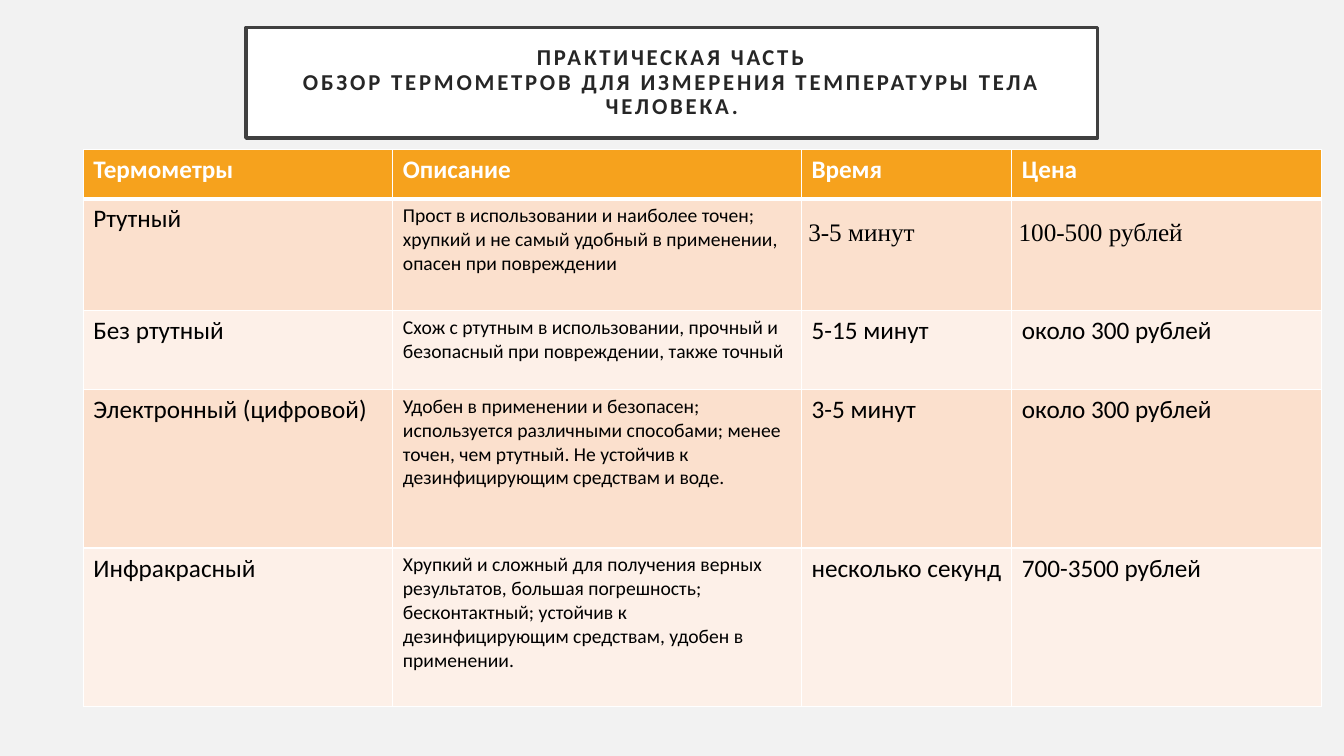
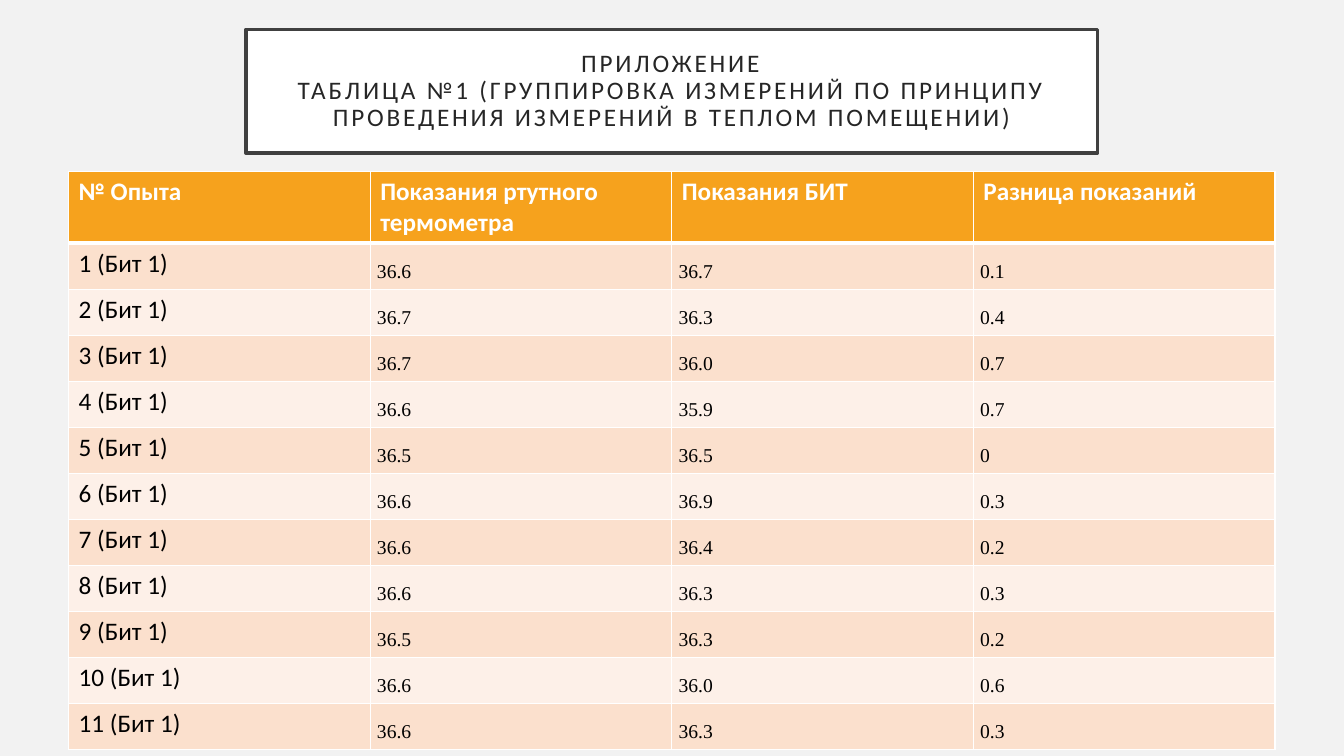
from lxml import etree
from pptx import Presentation
from pptx import util as u
from pptx.dml.color import RGBColor
from pptx.enum import text
from pptx.oxml.ns import qn

COLORS = {
    "page": "F2F2F2", "white": "FFFFFF", "frame": "404040", "title": "262626",
    "header": "F6A21D", "odd": "FBE0CD", "even": "FDF0E8", "body": "000000",
}
SANS, SERIF = "Calibri", "Times New Roman"
TITLE_ONLY = 5

THERMOMETERS = [
    ["Термометры", "Описание", "Время", "Цена"],
    ["Ртутный",
     "Прост в использовании и наиболее точен; хрупкий и не самый удобный "
     "в применении, опасен при повреждении",
     "3-5 минут", "100-500 рублей"],
    ["Без ртутный",
     "Схож с ртутным в использовании, прочный и безопасный при повреждении, "
     "также точный",
     "5-15 минут", "около 300 рублей"],
    ["Электронный (цифровой)",
     "Удобен в применении и безопасен; используется различными способами; "
     "менее точен, чем ртутный. Не устойчив к дезинфицирующим средствам и воде.",
     "3-5 минут", "около 300 рублей"],
    ["Инфракрасный",
     "Хрупкий и сложный для получения верных результатов, большая погрешность; "
     "бесконтактный; устойчив к дезинфицирующим средствам, удобен в применении.",
     "несколько секунд", "700-3500 рублей"],
]
READINGS_HEADER = ["№ Опыта", "Показания ртутного термометра",
                   "Показания БИТ", "Разница показаний"]
READINGS = [
    ("36.6", "36.7", "0.1"), ("36.7", "36.3", "0.4"), ("36.7", "36.0", "0.7"),
    ("36.6", "35.9", "0.7"), ("36.5", "36.5", "0"), ("36.6", "36.9", "0.3"),
    ("36.6", "36.4", "0.2"), ("36.6", "36.3", "0.3"), ("36.5", "36.3", "0.2"),
    ("36.6", "36.0", "0.6"), ("36.6", "36.3", "0.3"),
]


def rgb(name):
    return RGBColor.from_string(COLORS[name])


class Report:
    """Holds the deck, its style and the slide being filled."""

    def __init__(self):
        self.deck = Presentation()
        self.deck.slide_width, self.deck.slide_height = u.Cm(33.87), u.Cm(19.05)
        self.paint(self.deck.slide_master.background, "page")
        self.page = None

    @staticmethod
    def paint(item, color):
        item.fill.solid()
        item.fill.fore_color.rgb = rgb(color)

    @staticmethod
    def style(para, size, color, name=SANS, bold=False):
        para.font.size, para.font.name, para.font.bold = u.Pt(size), name, bold
        para.font.color.rgb = rgb(color)

    def add_page(self, title, top, height, size, bold=False):
        self.page = self.deck.slides.add_slide(
            self.deck.slide_layouts[TITLE_ONLY])
        box = self.page.shapes.title
        box.left, box.top = u.Cm(6.2), u.Cm(top)
        box.width, box.height = u.Cm(21.46), u.Cm(height)
        self.paint(box, "white")
        box.line.color.rgb, box.line.width = rgb("frame"), u.Pt(2.5)
        frame = box.text_frame
        frame.text = title
        frame.word_wrap = True
        frame.auto_size = text.MSO_AUTO_SIZE.NONE
        frame.vertical_anchor = text.MSO_ANCHOR.MIDDLE
        frame.margin_left = frame.margin_right = u.Cm(0.5)
        frame.margin_top = frame.margin_bottom = u.Cm(0.5)
        para = frame.paragraphs[0]
        para.alignment, para.line_spacing = text.PP_ALIGN.CENTER, 0.9
        self.style(para, size, "title", bold=bold)
        for span in para.runs:
            span._r.get_or_add_rPr().set("spc", "200")

    def borders(self, cell, top, bottom):
        """Draw white cell borders; top and bottom are widths in points."""
        props = cell._tc.get_or_add_tcPr()
        widths = {"lnL": 1, "lnR": 1, "lnT": top, "lnB": bottom}
        for index, (tag, width) in enumerate(widths.items()):
            line = etree.Element(qn(f"a:{tag}"), w=str(u.Pt(width)))
            fill = etree.SubElement(line, qn("a:solidFill"))
            etree.SubElement(fill, qn("a:srgbClr"), val=COLORS["white"])
            props.insert(index, line)

    def add_table(self, left, top, widths, heights, rows, look):
        """look(row, column) gives the size, font and alignment of a body cell."""
        table = self.page.shapes.add_table(
            len(rows), len(widths), u.Cm(left), u.Cm(top),
            u.Cm(sum(widths)), u.Cm(sum(heights))).table
        for column, width in zip(table.columns, widths):
            column.width = u.Cm(width)
        for r, (row, height) in enumerate(zip(rows, heights)):
            table.rows[r].height = u.Cm(height)
            for c, words in enumerate(row):
                cell = table.cell(r, c)
                cell.text = words
                para = cell.text_frame.paragraphs[0]
                if r == 0:
                    self.paint(cell, "header")
                    self.style(para, 18, "white", bold=True)
                else:
                    self.paint(cell, "odd" if r % 2 else "even")
                    size, name, align = look(r, c)
                    para.alignment = align
                    if name == SERIF:
                        para.line_spacing = 1.5
                        cell.margin_left = cell.margin_right = u.Cm(0.17)
                        cell.margin_top = cell.margin_bottom = u.Cm(0.17)
                    self.style(para, size, "body", name)
                self.borders(cell, 3 if r == 1 else 1, 3 if r == 0 else 1)


def thermometer_look(row, column):
    serif = row == 1 and column > 1
    return 14 if column == 1 else 18, SERIF if serif else SANS, None


def reading_look(row, column):
    if column == 0:
        return 18, SANS, None
    return 14, SERIF, text.PP_ALIGN.JUSTIFY


def main():
    report = Report()
    report.add_page("ПРАКТИЧЕСКАЯ ЧАСТЬ\vОБЗОР ТЕРМОМЕТРОВ ДЛЯ ИЗМЕРЕНИЯ "
                    "ТЕМПЕРАТУРЫ ТЕЛА ЧЕЛОВЕКА.", 0.69, 2.79, 16.2, bold=True)
    report.add_table(2.1, 3.77, [7.8, 10.3, 5.3, 7.8],
                     [1.24, 2.82, 1.99, 3.99, 3.99],
                     THERMOMETERS, thermometer_look)

    report.add_page("ПРИЛОЖЕНИЕ\vТАБЛИЦА №1 (ГРУППИРОВКА ИЗМЕРЕНИЙ ПО ПРИНЦИПУ "
                    "ПРОВЕДЕНИЯ ИЗМЕРЕНИЙ В ТЕПЛОМ ПОМЕЩЕНИИ)", 0.74, 3.12, 18)
    rows = [READINGS_HEADER] + [
        [f"{number} (Бит 1)", *values]
        for number, values in enumerate(READINGS, 1)]
    report.add_table(1.73, 4.32, [7.6] * 4, [1.04] * len(rows),
                     rows, reading_look)
    report.deck.save("out.pptx")


if __name__ == "__main__":
    main()
